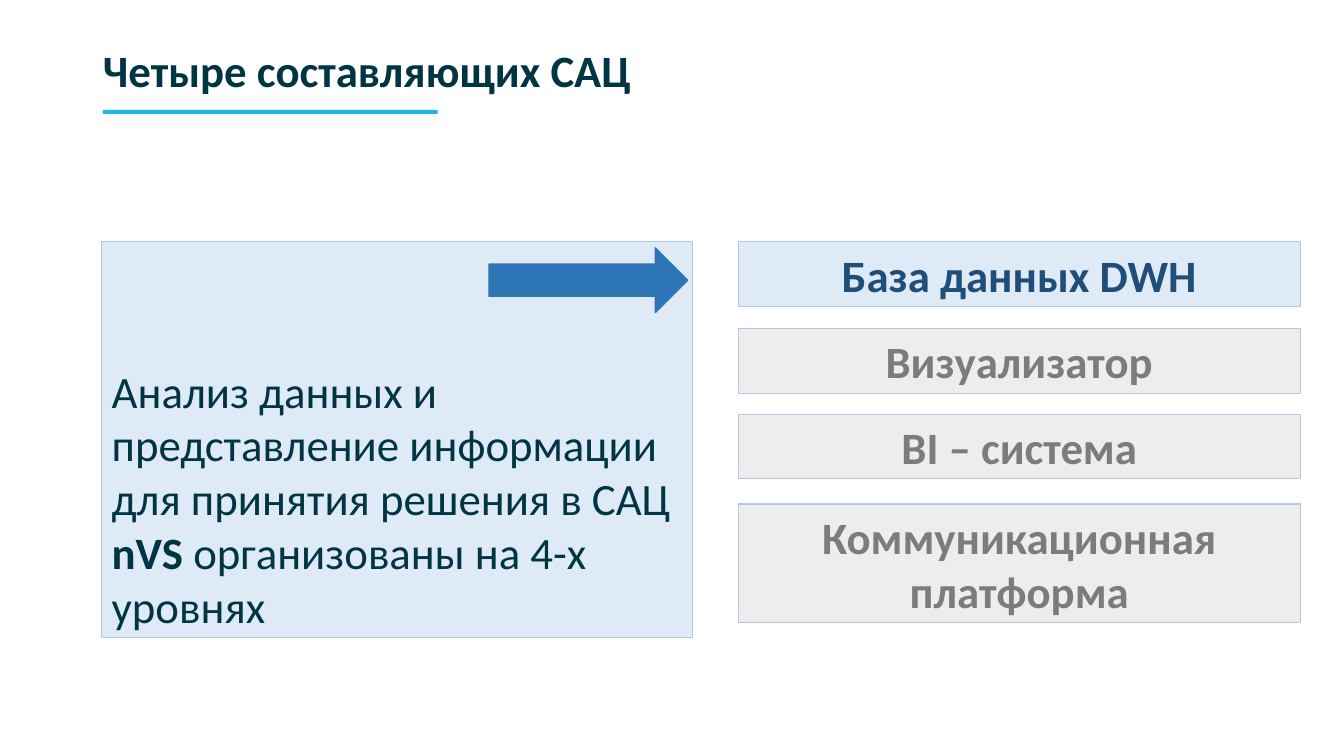
from pptx import Presentation
from pptx import util as u
from pptx.dml import color
from pptx.enum import shapes, text

PX = 9144  # EMU per px, 100 px to the inch
COLOURS = {
    "ink": "013544",
    "accent": "21B6E1",
    "arrow": "2E75B6",
    "border": "B4C7E7",
    "active_fill": "DEEBF7",
    "active_text": "1F4E79",
    "muted_fill": "EDEDED",
    "muted_text": "7C7C7C",
}


def rgb(name):
    return color.RGBColor.from_string(COLOURS[name])


class SlideBuilder:
    """Holds the text style and the current slide."""

    def __init__(self, deck, font="Calibri", size=32):
        self.page = deck.slides.add_slide(deck.slide_layouts[5])
        self.font, self.size = font, size

    def fill_text(self, box, spans, align, anchor, spacing=1.0):
        frame = box.text_frame
        frame_format = {"word_wrap": True, "auto_size": text.MSO_AUTO_SIZE.NONE,
                        "vertical_anchor": anchor}
        for name, value in frame_format.items():
            setattr(frame, name, value)
        para = frame.paragraphs[0]
        para.alignment = align
        para.line_spacing = spacing
        for words, ink, bold in spans:
            span = para.add_run()
            span.text = words
            font_format = {"name": self.font, "size": u.Pt(self.size), "bold": bold}
            for name, value in font_format.items():
                setattr(span.font, name, value)
            span.font.color.rgb = rgb(ink)

    def title(self, place, words):
        box = self.page.shapes.title
        for name, value in zip(("left", "top", "width", "height"), place):
            setattr(box, name, value * PX)
        self.fill_text(box, [(words, "ink", True)], text.PP_ALIGN.LEFT,
                       text.MSO_ANCHOR.MIDDLE, 0.9)

    def shape(self, kind, place, fill, line=None, weight=0.75):
        box = self.page.shapes.add_shape(kind, *(value * PX for value in place))
        box.shadow.inherit = False
        box.fill.solid()
        box.fill.fore_color.rgb = rgb(fill)
        if line:
            box.line.color.rgb = rgb(line)
            box.line.width = u.Pt(weight)
        else:
            box.line.fill.background()
        return box

    def panel(self, place, fill, spans, align, anchor):
        box = self.shape(shapes.MSO_SHAPE.RECTANGLE, place, fill, "border")
        self.fill_text(box, spans, align, anchor)


def main():
    deck = Presentation()
    deck.slide_width, deck.slide_height = 1333 * PX, 750 * PX
    slide = SlideBuilder(deck)

    # Title with its underline
    slide.title((92, 0, 1150, 145), "Четыре составляющих САЦ")
    slide.shape(shapes.MSO_SHAPE.RECTANGLE, (102, 109, 332, 4), "accent")

    # Summary on the left, with the arrow to the active component
    summary = [
        ("Анализ данных и представление информации для принятия решения в САЦ ",
         "ink", False),
        ("nVS", "ink", True),
        (" организованы на 4-х уровнях", "ink", False),
    ]
    slide.panel((101, 240, 586, 392), "active_fill", summary,
                text.PP_ALIGN.LEFT, text.MSO_ANCHOR.BOTTOM)
    slide.shape(shapes.MSO_SHAPE.RIGHT_ARROW, (485, 246, 197, 64),
                "arrow", "arrow", 1)

    # Four components on the right
    components = [
        ("База данных DWH", 240, 64, "active"),
        ("Визуализатор", 326, 64, "muted"),
        ("BI – система", 411, 64, "muted"),
        ("Коммуникационная платформа", 500, 118, "muted"),
    ]
    for words, top, height, state in components:
        slide.panel((732, top, 558, height), f"{state}_fill",
                    [(words, f"{state}_text", True)],
                    text.PP_ALIGN.CENTER, text.MSO_ANCHOR.MIDDLE)

    deck.save("out.pptx")


if __name__ == "__main__":
    main()
